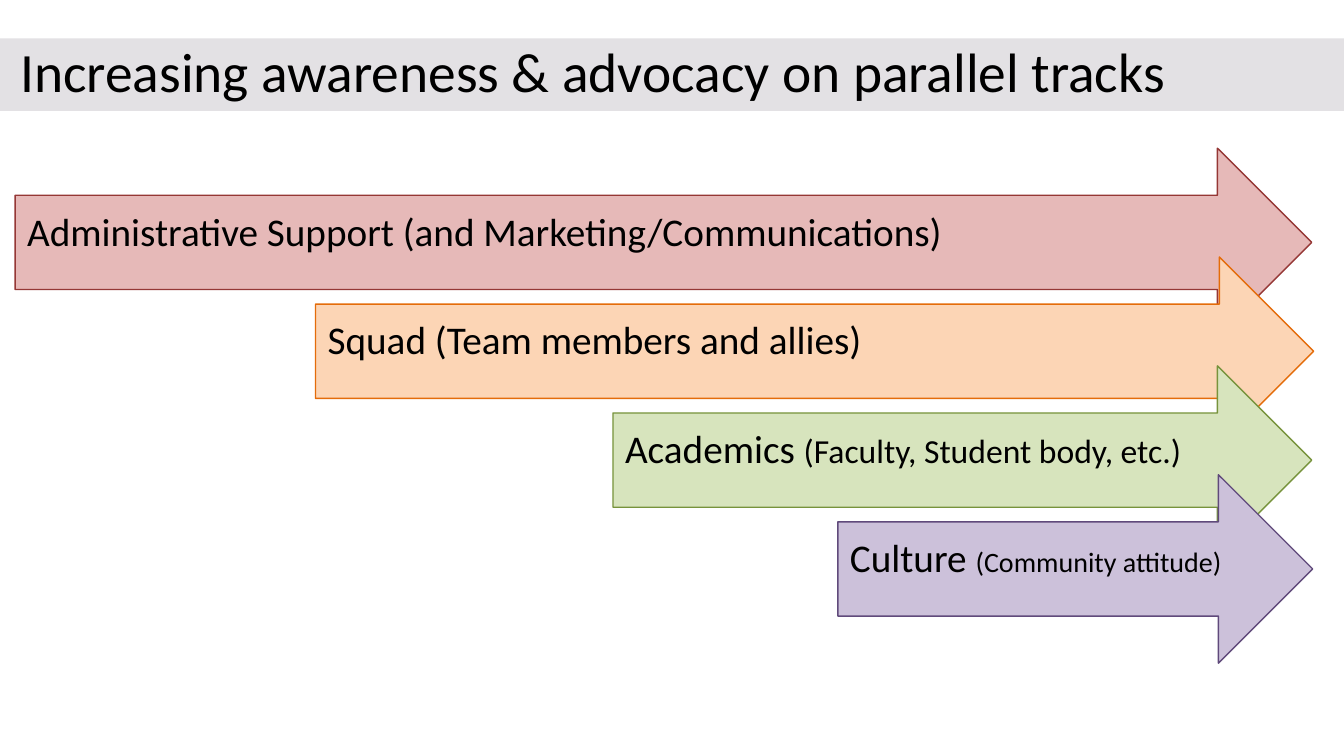
from typing import NamedTuple

from pptx import Presentation
from pptx.dml.color import RGBColor
from pptx.enum.shapes import MSO_SHAPE
from pptx.enum.text import MSO_ANCHOR, MSO_AUTO_SIZE, PP_ALIGN
from pptx.util import Inches, Pt

FONT = "Calibri"
BLACK = RGBColor(0x00, 0x00, 0x00)
TITLE_GREY = RGBColor(0xE3, 0xE1, 0xE4)
PINK, RED = RGBColor(0xE6, 0xB9, 0xB8), RGBColor(0x95, 0x37, 0x35)
PEACH, ORANGE = RGBColor(0xFC, 0xD5, 0xB5), RGBColor(0xE4, 0x6C, 0x0A)
LIME, GREEN = RGBColor(0xD7, 0xE4, 0xBD), RGBColor(0x77, 0x93, 0x3C)
LILAC, PURPLE = RGBColor(0xCC, 0xC1, 0xDA), RGBColor(0x60, 0x4A, 0x7B)

FIRST_TOP, TRACK_STEP, ARROW_HEIGHT = 1.47, 1.08, 1.87


class Track(NamedTuple):
    left: float
    width: float
    fill: RGBColor
    line: RGBColor
    runs: list[tuple[str, float]]


TRACKS = [
    Track(0.15, 12.86, PINK, RED,
          [("Administrative Support (and Marketing/Communications)", 28)]),
    Track(3.13, 9.9, PEACH, ORANGE, [("Squad (Team members and allies)", 28)]),
    Track(6.08, 6.93, LIME, GREEN,
          [("Academics ", 28), ("(Faculty, Student body, etc.)", 24)]),
    Track(8.31, 4.71, LILAC, PURPLE,
          [("Culture ", 28), ("(Community attitude)", 20)]),
]


def set_text(sp, runs: list[tuple[str, float]], *,
             margins: tuple[float, float, float, float],
             color: RGBColor = BLACK, line_spacing: float = 0.9) -> None:
    """Write one left-aligned paragraph; margins are left, top, right, bottom."""
    tf = sp.text_frame
    tf.word_wrap = True
    tf.auto_size = MSO_AUTO_SIZE.NONE
    tf.vertical_anchor = MSO_ANCHOR.MIDDLE
    tf.margin_left, tf.margin_top, tf.margin_right, tf.margin_bottom = map(Inches, margins)
    p = tf.paragraphs[0]
    p.alignment = PP_ALIGN.LEFT
    p.line_spacing = line_spacing
    for text, size in runs:
        r = p.add_run()
        r.text = text
        r.font.name = FONT
        r.font.size = Pt(size)
        r.font.color.rgb = color


def add_track(s, track: Track, top: float) -> None:
    sp = s.shapes.add_shape(MSO_SHAPE.RIGHT_ARROW, Inches(track.left), Inches(top),
                            Inches(track.width), Inches(ARROW_HEIGHT))
    sp.shadow.inherit = False
    sp.fill.solid()
    sp.fill.fore_color.rgb = track.fill
    sp.line.color.rgb = track.line
    sp.line.width = Pt(1)
    set_text(sp, track.runs, margins=(0.12, 0.12, 0.28, 0.3))


def main() -> None:
    prs = Presentation()
    prs.slide_width, prs.slide_height = Inches(13.33), Inches(7.5)
    s = prs.slides.add_slide(prs.slide_layouts[5])

    # Title band
    title = s.shapes.title
    title.left, title.top = Inches(-0.02), Inches(0.38)
    title.width, title.height = Inches(13.47), Inches(0.72)
    title.fill.solid()
    title.fill.fore_color.rgb = TITLE_GREY
    set_text(title, [("Increasing awareness & advocacy on parallel tracks", 39.6)],
             margins=(0.22, 0.05, 0.1, 0.05))

    # Parallel tracks, each arrow overlapping the one above
    for i, track in enumerate(TRACKS):
        add_track(s, track, FIRST_TOP + i * TRACK_STEP)

    prs.save("out.pptx")


if __name__ == "__main__":
    main()
